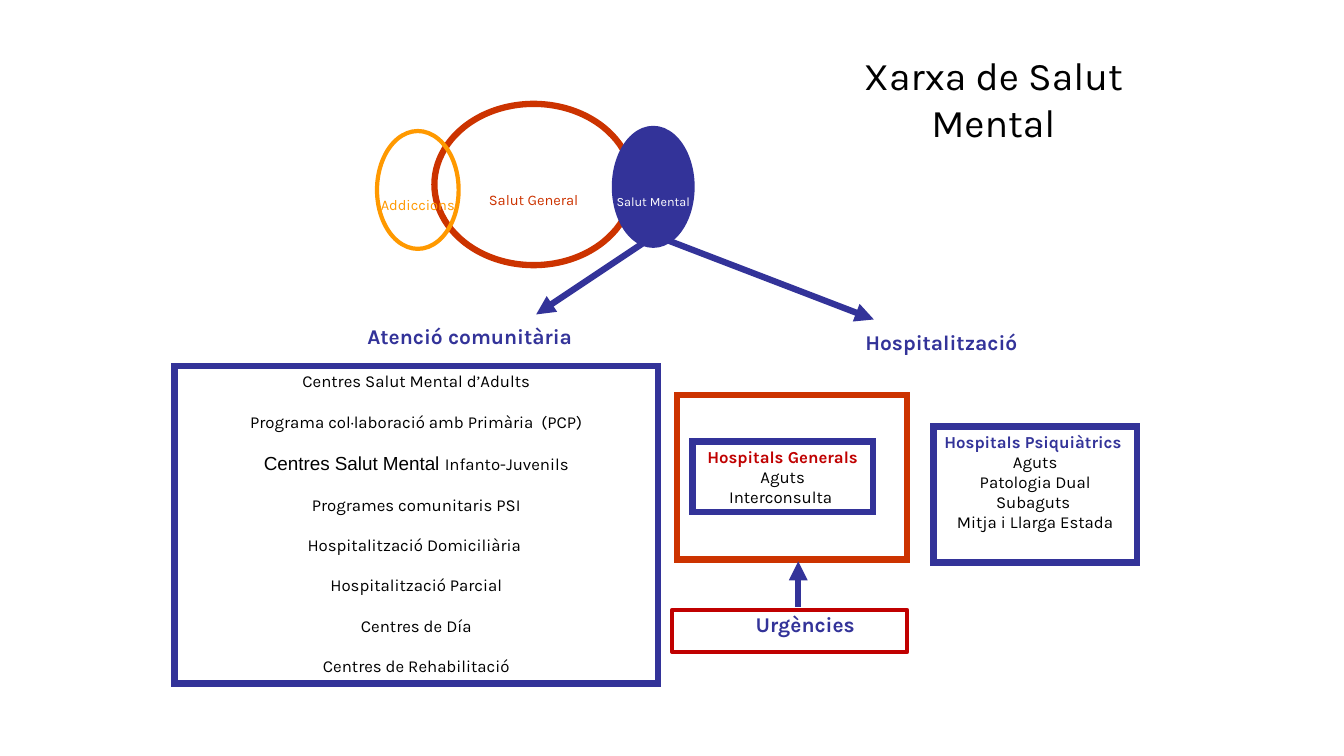
from lxml import etree
from pptx import Presentation
from pptx.dml.color import RGBColor
from pptx.enum import shapes, text
from pptx.oxml import ns
from pptx.util import Pt

NAVY, ORANGE, RED = "333399", "CC3300", "C00000"
AMBER, BLACK, WHITE = "FF9900", "000000", "FFFFFF"
FONT = "Karla"

# Content: each area is left, top, width, height in points
# Circles: label, area, fill, line colour, line width, text size, text colour
circles = [
    ("Salut General", (310.3, 74.2, 141.8, 115.2), None, ORANGE, 4.5, 10.5, ORANGE),
    ("Salut Mental", (438.5, 91.4, 56.2, 84.2), NAVY, NAVY, 3, 9, WHITE),
    ("Addiccions", (269.3, 93.6, 58.3, 84.2), None, AMBER, 3, 10.5, AMBER),
]
# Boxes: area, line colour, line width, heading, heading colour, lines, gap
boxes = [
    ((494.6, 315.4, 128.9, 50.4), NAVY, 4.5, "Hospitals Generals", RED,
     ["Aguts", "Interconsulta "], 0),
    ((124.6, 261.4, 345.6, 226.8), NAVY, 4.5, None, None,
     ["Centres Salut Mental d’Adults",
      "Programa col·laboració amb Primària  (PCP)",
      ("Centres Salut Mental ", "Infanto-Juvenils"),
      "Programes comunitaris PSI",
      "Hospitalització Domiciliària ",
      "Hospitalització Parcial",
      "Centres de Día",
      "Centres de Rehabilitació"], 14.4),
    ((666.7, 304.6, 145.4, 97.2), NAVY, 4.5, "Hospitals Psiquiàtrics ", NAVY,
     ["Aguts", "Patologia Dual", "Subaguts ", "Mitja i Llarga Estada"], 0),
    ((483.8, 282.2, 164.2, 117.4), ORANGE, 4.5, None, None, [], 0),
    ((480.2, 435.6, 167.8, 30.2), RED, 3, None, None, [], 0),
]
# Headings: wording, area, size, colour, bold, wrap
headings = [
    ("Atenció comunitària", (243.4, 227.5, 184.3, 25.9), 15, NAVY, True, False),
    ("Hospitalització", (602.6, 231.8, 139.7, 25.9), 15, NAVY, True, False),
    ("Urgències", (519.8, 433.4, 110.9, 25.9), 15, NAVY, True, True),
    ("Xarxa de Salut Mental", (565.2, 33.1, 288.7, 41), 28, BLACK, False, True),
]
# Arrows: from x, from y, to x, to y
arrows = [
    (469.4, 167, 383, 224.6),
    (444.2, 159.1, 624.2, 228.2),
    (570.2, 433.4, 570.2, 401),
]

deck = Presentation()
deck.slide_width, deck.slide_height = Pt(960), Pt(540)
slide = deck.slides.add_slide(deck.slide_layouts[6])


def color(hex_code):
    return RGBColor.from_string(hex_code)


def add_outline(preset, area, fill, line, width):
    outline = slide.shapes.add_shape(preset, *map(Pt, area))
    outline.shadow.inherit = False
    if fill:
        outline.fill.solid()
        outline.fill.fore_color.rgb = color(fill)
    else:
        outline.fill.background()
    outline.line.color.rgb = color(line)
    outline.line.width = Pt(width)
    return outline


def style(run, size, hex_code, bold=False, face=FONT):
    run.font.size, run.font.name, run.font.bold = Pt(size), face, bold
    run.font.color.rgb = color(hex_code)


def write(frame, wording, size, hex_code, bold=False):
    frame.text = wording
    frame.paragraphs[0].alignment = text.PP_ALIGN.CENTER
    style(frame.paragraphs[0].runs[0], size, hex_code, bold)


# Overlapping circles, labels set below the centre
for label, area, fill, line, width, size, ink in circles:
    circle = add_outline(shapes.MSO_SHAPE.OVAL, area, fill, line, width)
    frame = circle.text_frame
    frame.word_wrap = False
    frame.vertical_anchor = text.MSO_ANCHOR.MIDDLE
    frame.margin_top = Pt(24.6)
    write(frame, label, size, ink)

# Boxes of services
for area, line, width, heading, heading_color, services, gap in boxes:
    box = add_outline(shapes.MSO_SHAPE.RECTANGLE, area, None, line, width)
    if line != RED:
        etree.SubElement(box.line._get_or_add_ln(), ns.qn("a:miter"), lim="800000")
    frame = box.text_frame
    frame.vertical_anchor = text.MSO_ANCHOR.TOP
    rows = ([heading] if heading else []) + services
    for i, row in enumerate(rows):
        paragraph = frame.paragraphs[0] if i == 0 else frame.add_paragraph()
        paragraph.alignment = text.PP_ALIGN.CENTER
        if i:
            paragraph.space_before = Pt(gap)
        if isinstance(row, tuple):
            lead, rest = row
            paragraph.text = lead
            style(paragraph.runs[0], 13.5, BLACK, face="Arial")
            run = paragraph.add_run()
            run.text = rest
            style(run, 12, BLACK)
        else:
            is_heading = bool(heading) and i == 0
            paragraph.text = row
            style(paragraph.runs[0], 12, heading_color if is_heading else BLACK, is_heading)

# Headings and title
for wording, area, size, ink, bold, wrap in headings:
    frame = slide.shapes.add_textbox(*map(Pt, area)).text_frame
    frame.word_wrap = wrap
    write(frame, wording, size, ink, bold)

# Arrows
for ends in arrows:
    arrow = slide.shapes.add_connector(shapes.MSO_CONNECTOR.STRAIGHT, *map(Pt, ends))
    arrow.line.color.rgb = color(NAVY)
    arrow.line.width = Pt(4.5)
    etree.SubElement(arrow.line._get_or_add_ln(), ns.qn("a:tailEnd"), type="triangle")
    etree.SubElement(arrow._element.spPr, ns.qn("a:effectLst"))

deck.save("out.pptx")
